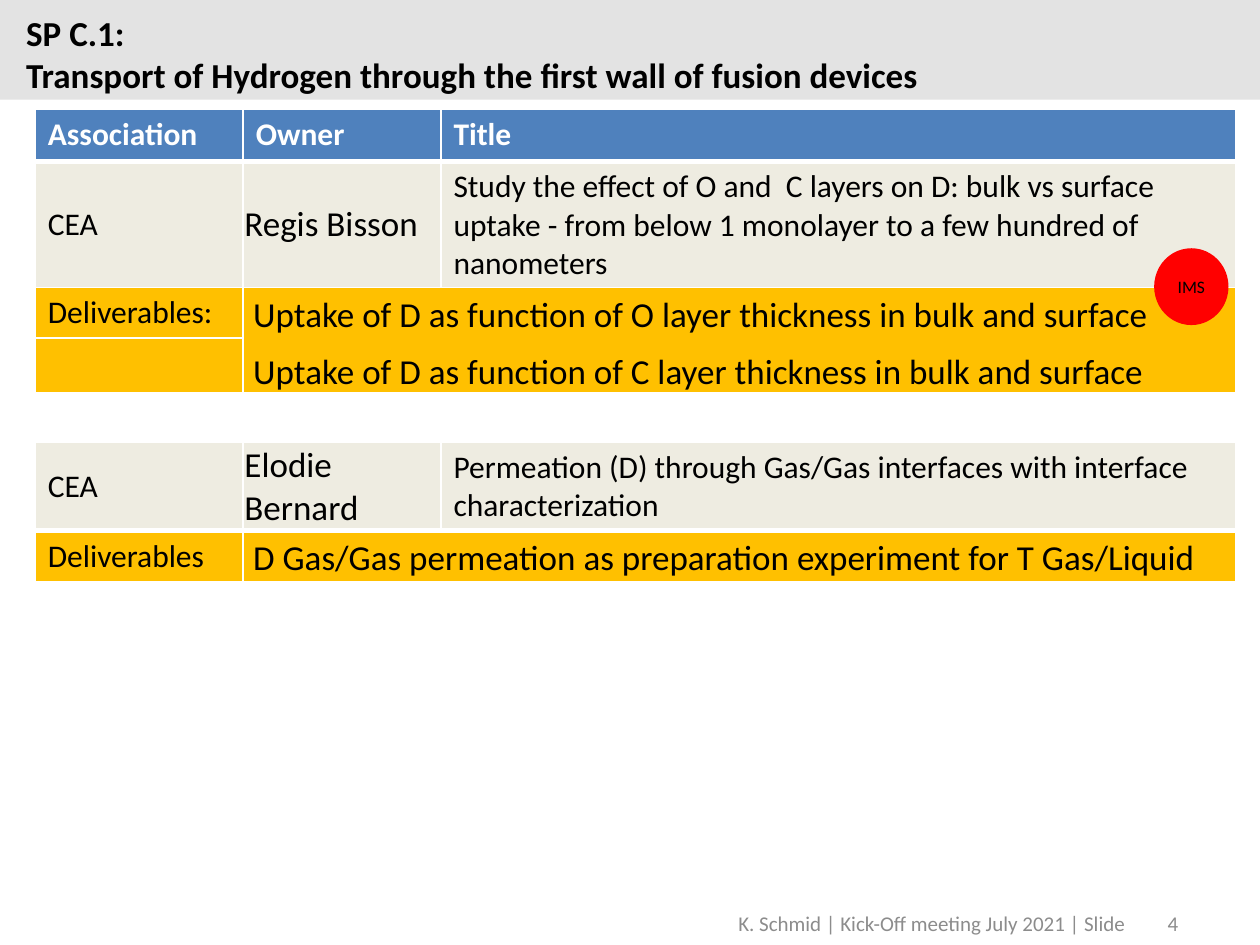
from pptx import Presentation
from pptx.dml.color import RGBColor
from pptx.enum.shapes import MSO_SHAPE
from pptx.enum.text import MSO_ANCHOR, PP_ALIGN
from pptx.oxml.ns import qn
from pptx.util import Inches, Pt
from lxml.etree import SubElement

BLACK = RGBColor(0x00, 0x00, 0x00)
WHITE = RGBColor(0xFF, 0xFF, 0xFF)
BAND_GREY = RGBColor(0xE3, 0xE3, 0xE3)
FOOTER_GREY = RGBColor(0x8C, 0x8C, 0x8C)
HEADER_BLUE = RGBColor(0x4F, 0x81, 0xBD)
PROJECT_BEIGE = RGBColor(0xEE, 0xEC, 0xE1)
DELIVERABLE_GOLD = RGBColor(0xFF, 0xC0, 0x00)
BADGE_RED = RGBColor(0xFF, 0x00, 0x00)

COLUMN_WIDTHS = (1.65, 1.57, 6.31)
MARGIN_SIDES = ("margin_left", "margin_top", "margin_right", "margin_bottom")
OWNER_MARGINS = (0.01, 0.01, 0.01, 0)
DELIVERABLE_MARGINS = (0.07, 0, 0.07, 0)
DELIVERABLE_SPACING = {"line_spacing": 1.15, "space_before": Pt(2.4), "space_after": Pt(2.4)}


def set_attributes(target, values):
    """Set every attribute named in values on the target."""
    for name, value in values.items():
        setattr(target, name, value)


def write(frame, lines, size, color=BLACK, bold=False, **paragraph_format):
    """Write one paragraph for each line in a common format."""
    for index, line in enumerate(lines):
        paragraph = frame.add_paragraph() if index else frame.paragraphs[0]
        run = paragraph.add_run()
        run.text = line
        set_attributes(paragraph, paragraph_format)
        set_attributes(run.font, {"name": "Calibri", "size": Pt(size), "bold": bold})
        run.font.color.rgb = color
    return frame


def add_label(slide, box, lines, size, color, anchor, **text_format):
    """Place a wrapped text box."""
    frame = slide.shapes.add_textbox(*map(Inches, box)).text_frame
    set_attributes(frame, {"word_wrap": True, "vertical_anchor": anchor})
    write(frame, lines, size, color, **text_format)


def add_solid(slide, preset, box, color):
    """Place a plain filled shape without outline or shadow."""
    solid = slide.shapes.add_shape(preset, *map(Inches, box))
    solid.shadow.inherit = False
    solid.fill.solid()
    solid.fill.fore_color.rgb = color
    solid.line.fill.background()
    return solid


def add_title(slide, box):
    """Place the grey title band and its two-line heading."""
    left, top, width, height = box
    add_solid(slide, MSO_SHAPE.RECTANGLE, box, BAND_GREY)
    heading = ["SP C.1:", "Transport of Hydrogen through the first wall of fusion devices"]
    add_label(slide, (left + 0.11, top + 0.04, width - 1.17, height - 0.02), heading,
              20, BLACK, MSO_ANCHOR.TOP, bold=True)


def add_footer(slide, box):
    """Place the meeting line and the slide number."""
    left, top, width, height = box
    add_label(slide, box, ["K. Schmid | Kick-Off meeting July 2021 | Slide "], 12,
              FOOTER_GREY, MSO_ANCHOR.MIDDLE, alignment=PP_ALIGN.CENTER)
    add_label(slide, (left + 1.89, top, 2.25, height), ["4"], 12,
              FOOTER_GREY, MSO_ANCHOR.MIDDLE, alignment=PP_ALIGN.RIGHT)


def add_badge(slide, box):
    """Place the round red IMS badge."""
    frame = add_solid(slide, MSO_SHAPE.OVAL, box, BADGE_RED).text_frame
    set_attributes(frame, {"word_wrap": False, "vertical_anchor": MSO_ANCHOR.MIDDLE})
    write(frame, ["IMS"], 10, alignment=PP_ALIGN.CENTER)


def style_cell(cell, color, top_width, bottom_width):
    """Give a cell white borders and a solid fill."""
    properties = cell._tc.get_or_add_tcPr()
    for side, width in (("L", 1), ("R", 1), ("T", top_width), ("B", bottom_width)):
        border = SubElement(properties, qn(f"a:ln{side}"), w=str(Pt(width)))
        fill = SubElement(border, qn("a:solidFill"))
        SubElement(fill, qn("a:srgbClr"), val=str(WHITE))
    cell.fill.solid()
    cell.fill.fore_color.rgb = color


def fill_cell(cell, lines, size=18, margins=None, anchor=MSO_ANCHOR.MIDDLE, **text_format):
    """Write the text of a cell with its margins and anchor."""
    cell.vertical_anchor = anchor
    if margins:
        set_attributes(cell, dict(zip(MARGIN_SIDES, map(Inches, margins))))
    return write(cell.text_frame, lines, size, **text_format)


def add_grid(slide, box, row_heights, row_colors):
    """Place an empty three-column table with a heavy line under its first row."""
    table = slide.shapes.add_table(len(row_heights), len(COLUMN_WIDTHS), *map(Inches, box)).table
    set_attributes(table, {"first_row": False, "horz_banding": False})
    for column, width in zip(table.columns, COLUMN_WIDTHS):
        column.width = Inches(width)
    for index, (row, height, color) in enumerate(zip(table.rows, row_heights, row_colors)):
        row.height = Inches(height)
        for cell in row.cells:
            style_cell(cell, color, 3 if index == 1 else 1, 3 if index == 0 else 1)
    return table


def fill_project(table, row, owner, title):
    """Fill a project row with association, owner and title."""
    fill_cell(table.cell(row, 0), ["CEA"])
    fill_cell(table.cell(row, 1), [owner], 20, OWNER_MARGINS)
    fill_cell(table.cell(row, 2), [title])


def fill_deliverables(table, row, last_row, label, deliverables):
    """Fill the deliverables label and the merged cell beside it."""
    fill_cell(table.cell(row, 0), [label])
    merged = table.cell(row, 1)
    merged.merge(table.cell(last_row, 2))
    frame = fill_cell(merged, deliverables, 20, DELIVERABLE_MARGINS, MSO_ANCHOR.TOP,
                      **DELIVERABLE_SPACING)
    for paragraph in frame.paragraphs:
        paragraph._p.get_or_add_pPr().set("marL", str(Inches(0.01)))


def add_uptake_table(slide, box):
    """Place the header and the uptake project."""
    table = add_grid(slide, box, (0.41, 1, 0.4, 0.42),
                     (HEADER_BLUE, PROJECT_BEIGE, DELIVERABLE_GOLD, DELIVERABLE_GOLD))
    for cell, heading in zip(table.rows[0].cells, ("Association", "Owner", "Title")):
        fill_cell(cell, [heading], anchor=MSO_ANCHOR.TOP, color=WHITE, bold=True)
    fill_project(table, 1, "Regis Bisson",
                 "Study the effect of O and  C layers on D: bulk vs surface uptake - "
                 "from below 1 monolayer to a few hundred of nanometers")
    fill_deliverables(table, 2, 3, "Deliverables:", [
        f"Uptake of D as function of {layer} layer thickness in bulk and surface"
        for layer in ("O", "C")])


def add_permeation_table(slide, box):
    """Place the permeation project."""
    table = add_grid(slide, box, (0.7, 0.41), (PROJECT_BEIGE, DELIVERABLE_GOLD))
    fill_project(table, 0, "Elodie Bernard",
                 "Permeation (D) through Gas/Gas interfaces with interface characterization")
    fill_deliverables(table, 1, 1, "Deliverables",
                      ["D Gas/Gas permeation as preparation experiment for T Gas/Liquid"])


def main():
    """Build the slide and save it."""
    deck = Presentation()
    set_attributes(deck, {"slide_width": Inches(10), "slide_height": Inches(7.5)})
    slide = deck.slides.add_slide(deck.slide_layouts[6])
    add_title(slide, (0, 0, 10, 0.79))
    add_footer(slide, (5.31, 7.13, 4.21, 0.4))
    add_uptake_table(slide, (0.28, 0.87, 9.53, 2.23))
    add_badge(slide, (9.16, 1.97, 0.59, 0.61))
    add_permeation_table(slide, (0.28, 3.51, 9.53, 1.11))
    deck.save("out.pptx")


if __name__ == "__main__":
    main()
